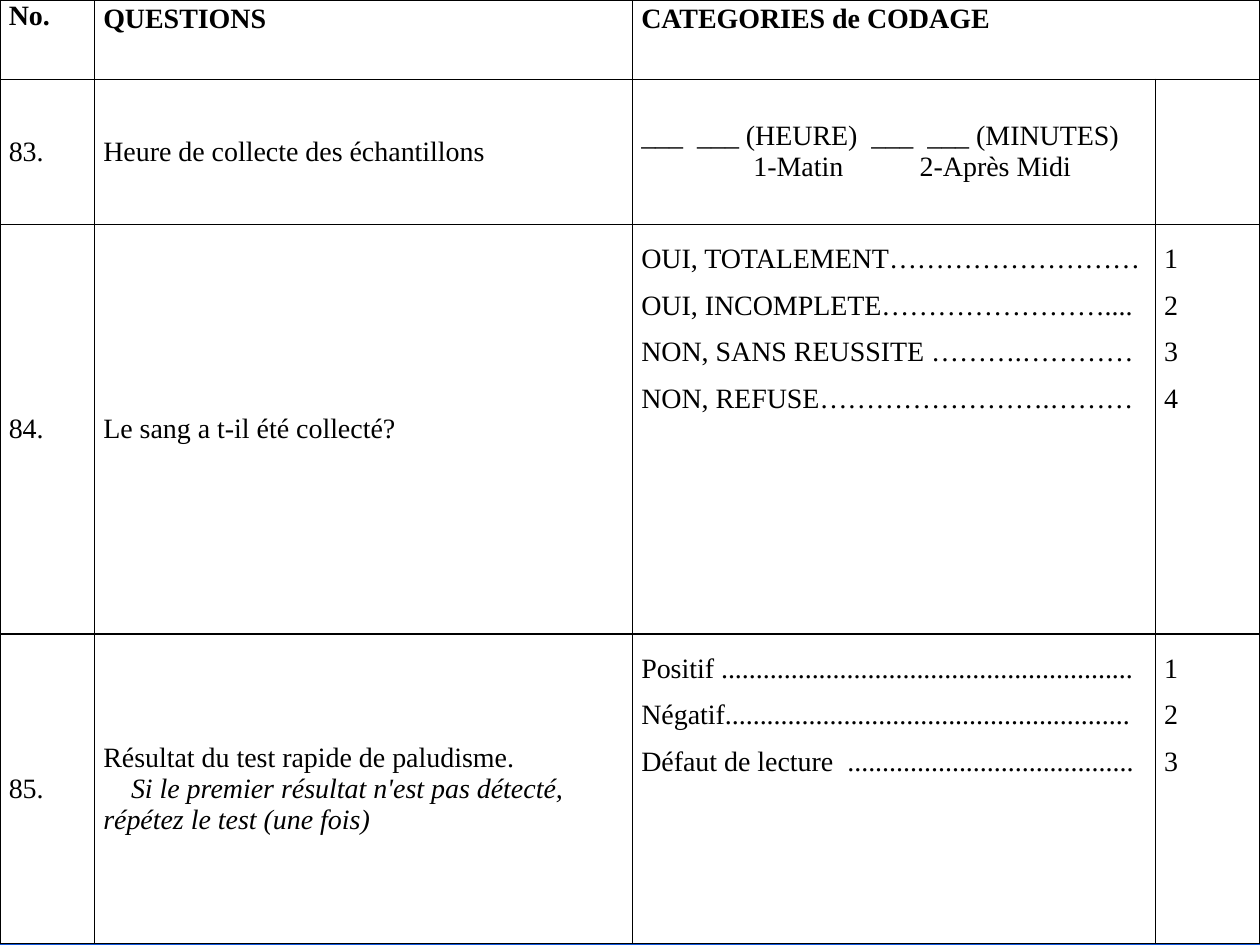
from lxml import etree
from pptx import Presentation
from pptx import util as u
from pptx.dml.color import RGBColor
from pptx.enum import text
from pptx.oxml.ns import qn

COLORS = {"page": "0F56DC", "cell": "FFFFFF", "ink": "000000"}
FONT = {"name": "Times New Roman", "size": u.Pt(16), "bold": False, "italic": False}
COLUMNS = [0.75, 4.27, 4.15, 0.83]
ROWS = [0.63, 1.15, 3.25, 2.46]

HEADINGS = ["No.", "QUESTIONS", "CATEGORIES de CODAGE"]
BLOOD_ANSWERS = [
    "OUI, TOTALEMENT………………………",
    "OUI, INCOMPLETE……………………....",
    "NON, SANS REUSSITE ……….…………",
    "NON, REFUSE…………………….………",
]
TEST_ANSWERS = [
    "Positif ...........................................................",
    "Négatif..........................................................",
    "Défaut de lecture  .........................................",
]


def rgb(name):
    return RGBColor.from_string(COLORS[name])


def add_borders(cell):
    """Draw a 1 pt line on all four sides; lines come before the fill."""
    props = cell._tc.get_or_add_tcPr()
    for position, side in enumerate(("lnL", "lnR", "lnT", "lnB")):
        line = etree.Element(qn(f"a:{side}"), w=str(u.Pt(1)))
        fill = etree.SubElement(line, qn("a:solidFill"))
        etree.SubElement(fill, qn("a:srgbClr"), val=COLORS["ink"])
        props.insert(position, line)


def style_cell(cell, column):
    cell.fill.solid()
    cell.fill.fore_color.rgb = rgb("cell")
    edge = u.Inches(0 if column == 0 else 0.03)
    margins = {"margin_left": u.Inches(0.07), "margin_right": u.Inches(0.07),
               "margin_top": edge, "margin_bottom": edge}
    for key, value in margins.items():
        setattr(cell, key, value)
    add_borders(cell)


def write_cell(cell, lines, middle=False, spacing=None, **font):
    """Write one paragraph per line of text."""
    anchor = text.MSO_ANCHOR
    cell.vertical_anchor = anchor.MIDDLE if middle else anchor.TOP
    for index, line in enumerate(lines):
        frame = cell.text_frame
        para = frame.add_paragraph() if index else frame.paragraphs[0]
        if spacing:
            para.line_spacing = spacing
        span = para.add_run()
        span.text = line
        for key, value in {**FONT, **font}.items():
            setattr(span.font, key, value)
        span.font.color.rgb = rgb("ink")


def set_tabs(para, stops):
    tabs = etree.SubElement(para._p.get_or_add_pPr(), qn("a:tabLst"))
    for stop in stops:
        etree.SubElement(tabs, qn("a:tab"), pos=str(u.Inches(stop)), algn="l")


def write_answers(table, row, answers):
    """List the answers beside their numbered codes."""
    codes = [str(number) for number in range(1, len(answers) + 1)]
    for column, lines in ((2, answers), (3, codes)):
        write_cell(table.cell(row, column), lines, spacing=1.5)


def add_questionnaire(page, left, top, width, height):
    frame = page.shapes.add_table(len(ROWS), len(COLUMNS), left, top, width, height)
    table = frame.table
    table.first_row = table.horz_banding = False
    for column, size in zip(table.columns, COLUMNS):
        column.width = u.Inches(size)
    for row, size in zip(table.rows, ROWS):
        row.height = u.Inches(size)
    for row in range(len(ROWS)):
        for column in range(len(COLUMNS)):
            style_cell(table.cell(row, column), column)

    # Heading row
    table.cell(0, 2).merge(table.cell(0, 3))
    for column, heading in enumerate(HEADINGS):
        write_cell(table.cell(0, column), [heading], bold=True)

    # Numbers and questions
    questions = [
        ["Heure de collecte des échantillons"],
        ["Le sang a t-il été collecté?"],
        ["Résultat du test rapide de paludisme.",
         "Si le premier résultat\u00a0n'est pas détecté, répétez le test\u00a0(une fois)"],
    ]
    for row, lines in enumerate(questions, start=1):
        write_cell(table.cell(row, 0), [f"{82 + row}."], middle=True)
        write_cell(table.cell(row, 1), lines, middle=True)
    hint = table.cell(3, 1).text_frame.paragraphs[1]
    hint._p.get_or_add_pPr().set("indent", str(u.Inches(0.22)))
    hint.runs[0].font.italic = True

    # Answers
    time_cell = table.cell(1, 2)
    write_cell(time_cell, ["___  ___ (HEURE)  ___  ___ (MINUTES)",
                           "\t1-Matin\t2-Après Midi"], middle=True)
    set_tabs(time_cell.text_frame.paragraphs[1], [0.89, 2.21])
    write_answers(table, 2, BLOOD_ANSWERS)
    write_answers(table, 3, TEST_ANSWERS)


def main():
    deck = Presentation()
    deck.slide_width, deck.slide_height = u.Inches(10), u.Inches(7.5)
    page = deck.slides.add_slide(deck.slide_layouts[6])
    page.background.fill.solid()
    page.background.fill.fore_color.rgb = rgb("page")
    add_questionnaire(page, u.Inches(0), u.Inches(0), u.Inches(10), u.Inches(7.5))
    deck.save("out.pptx")


if __name__ == "__main__":
    main()
